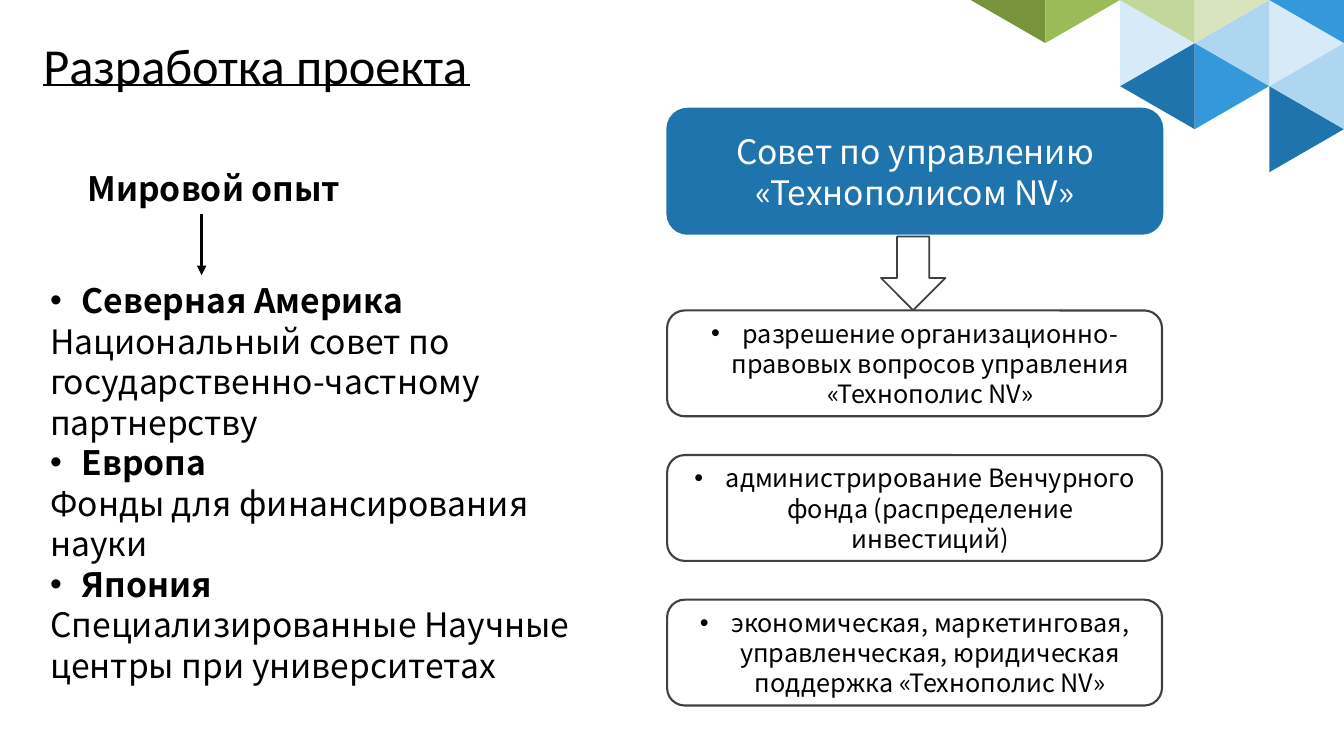
from lxml import etree
from pptx import Presentation
from pptx.dml.color import RGBColor
from pptx.enum.shapes import MSO_CONNECTOR, MSO_SHAPE
from pptx.enum.text import MSO_ANCHOR, PP_ALIGN
from pptx.oxml.ns import qn
from pptx.util import Pt

TRIANGLE = MSO_SHAPE.ISOSCELES_TRIANGLE
ROUNDED = MSO_SHAPE.ROUNDED_RECTANGLE
DOWN_ARROW = MSO_SHAPE.DOWN_ARROW
STRAIGHT = MSO_CONNECTOR.STRAIGHT
LEFT, CENTER = PP_ALIGN.LEFT, PP_ALIGN.CENTER
MIDDLE = MSO_ANCHOR.MIDDLE

BLACK, WHITE, GREY, BLUE = "000000", "FFFFFF", "404040", "1F74AD"
BODY_FONT, TITLE_FONT = "Noto Sans CJK TC", "Calibri"
BULLET_INDENT = 22.5

# Mosaic triangles: column, row, direction of the tip, colour
COLUMN_WIDTH, ROW_HEIGHT = 53.33, 30.75
MOSAIC_LEFT = 800
TIP_LEFT, TIP_RIGHT = 270, 90
MOSAIC = [
    (2, 3, TIP_RIGHT, BLUE),
    (2, 2, TIP_LEFT, "AED6F1"),
    (2, 1, TIP_RIGHT, "D6EAF8"),
    (1, 2, TIP_RIGHT, "3498DB"),
    (1, 1, TIP_LEFT, "AED6F1"),
    (0, 2, TIP_LEFT, BLUE),
    (0, 1, TIP_RIGHT, "D6EAF8"),
    (0, 0, TIP_LEFT, "C3D69B"),
    (1, 0, TIP_RIGHT, "D7E4BD"),
    (-2, 0, TIP_LEFT, "77933C"),
    (-1, 0, TIP_RIGHT, "9BBB59"),
    (2, 0, TIP_LEFT, "3498DB"),
]

REGIONS = [
    ("Северная Америка", "Национальный совет по государственно-частному партнерству"),
    ("Европа", "Фонды для финансирования науки"),
    ("Япония", "Специализированные Научные центры при университетах"),
]

COUNCIL_TASKS = [
    "разрешение организационно-правовых вопросов управления «Технополис NV»",
    "администрирование Венчурного фонда (распределение инвестиций)",
    "экономическая, маркетинговая, управленческая, юридическая поддержка «Технополис NV»",
]
TASK_TOP, TASK_STEP = 221.75, 103.3


def rgb(color):
    return RGBColor.from_string(color)


def write(paragraph, text, size=24, color=BLACK, font=BODY_FONT, bold=False,
          align=LEFT, bullet=False, spacing=None):
    run = paragraph.add_run()
    run.text = text
    run.font.size = Pt(size)
    run.font.name = font
    run.font.bold = bold
    run.font.color.rgb = rgb(color)
    paragraph.alignment = align
    if spacing:
        paragraph.line_spacing = Pt(spacing)
    if bullet:
        properties = paragraph._p.get_or_add_pPr()
        properties.set("marL", str(Pt(BULLET_INDENT)))
        properties.set("indent", str(-Pt(BULLET_INDENT)))
        etree.SubElement(properties, qn("a:buFont")).set("typeface", "Arial")
        etree.SubElement(properties, qn("a:buChar")).set("char", "•")


class SlideBuilder:
    """Adds styled elements to one slide; all lengths are in points."""

    def __init__(self, slide):
        self.shapes = slide.shapes

    def shape(self, kind, left, top, width, height, fill=None, line=None,
              line_width=1.5, rotation=0):
        shape = self.shapes.add_shape(kind, Pt(left), Pt(top), Pt(width), Pt(height))
        shape.shadow.inherit = False
        shape.rotation = rotation
        if fill:
            shape.fill.solid()
            shape.fill.fore_color.rgb = rgb(fill)
        else:
            shape.fill.background()
        if line:
            shape.line.color.rgb = rgb(line)
            shape.line.width = Pt(line_width)
        else:
            shape.line.fill.background()
        return shape

    def box(self, text, left, top, width, height, fill=None, line=None, **text_format):
        """Rounded box with centred text."""
        frame = self.shape(ROUNDED, left, top, width, height, fill, line).text_frame
        frame.word_wrap = True
        frame.vertical_anchor = MIDDLE
        write(frame.paragraphs[0], text, align=CENTER, **text_format)

    def text(self, paragraphs, left, top, width, height, margins=True):
        """Text box from (text, format) pairs, one paragraph each."""
        frame = self.shapes.add_textbox(Pt(left), Pt(top), Pt(width), Pt(height)).text_frame
        frame.word_wrap = True
        if not margins:
            frame.margin_left = frame.margin_right = 0
            frame.margin_top = frame.margin_bottom = 0
        for index, (text, text_format) in enumerate(paragraphs):
            paragraph = frame.add_paragraph() if index else frame.paragraphs[0]
            write(paragraph, text, **text_format)

    def line(self, start, end, width, arrow=False):
        connector = self.shapes.add_connector(STRAIGHT, *map(Pt, start + end))
        connector.line.color.rgb = rgb(BLACK)
        connector.line.width = Pt(width)
        if arrow:
            outline = connector.line._get_or_add_ln()
            etree.SubElement(outline, qn("a:tailEnd")).set("type", "triangle")
        etree.SubElement(connector._element.spPr, qn("a:effectLst"))

    def mosaic(self):
        side = 2 * ROW_HEIGHT
        for column, row, rotation, color in MOSAIC:
            center_x = MOSAIC_LEFT + (column + 0.5) * COLUMN_WIDTH
            center_y = row * ROW_HEIGHT
            self.shape(TRIANGLE, center_x - side / 2, center_y - COLUMN_WIDTH / 2,
                       side, COLUMN_WIDTH, fill=color, rotation=rotation)


def main():
    presentation = Presentation()
    presentation.slide_width, presentation.slide_height = Pt(960), Pt(540)
    slide = presentation.slides.add_slide(presentation.slide_layouts[6])
    builder = SlideBuilder(slide)

    builder.mosaic()
    builder.text([("Разработка проекта", {"size": 36, "font": TITLE_FONT})],
                 31, 24, 828, 62, margins=False)
    builder.line((31, 60.5), (336, 60.5), 1.5)

    regions = []
    for region, practice in REGIONS:
        regions.append((region, {"bold": True, "bullet": True, "spacing": 28.9}))
        regions.append((practice, {"spacing": 28.9}))
    builder.text(regions, 28.8, 196.5, 416, 269)

    builder.box("Совет по управлению «Технополисом NV»", 476, 77, 355, 90.7,
                fill=BLUE, color=WHITE, spacing=28.9)
    builder.shape(DOWN_ARROW, 629.3, 169, 46, 52.6, line=GREY, line_width=1.25)
    for index, task in enumerate(COUNCIL_TASKS):
        builder.box(task, 476.5, TASK_TOP + index * TASK_STEP, 353.5, 75.6,
                    line=GREY, size=18, bullet=True, spacing=21.6)

    builder.text([("Мировой опыт", {"bold": True, "spacing": 28.9})], 55.5, 116, 372, 36)
    builder.line((144, 152.6), (144, 196.5), 2.25, arrow=True)

    presentation.save("out.pptx")


if __name__ == "__main__":
    main()
